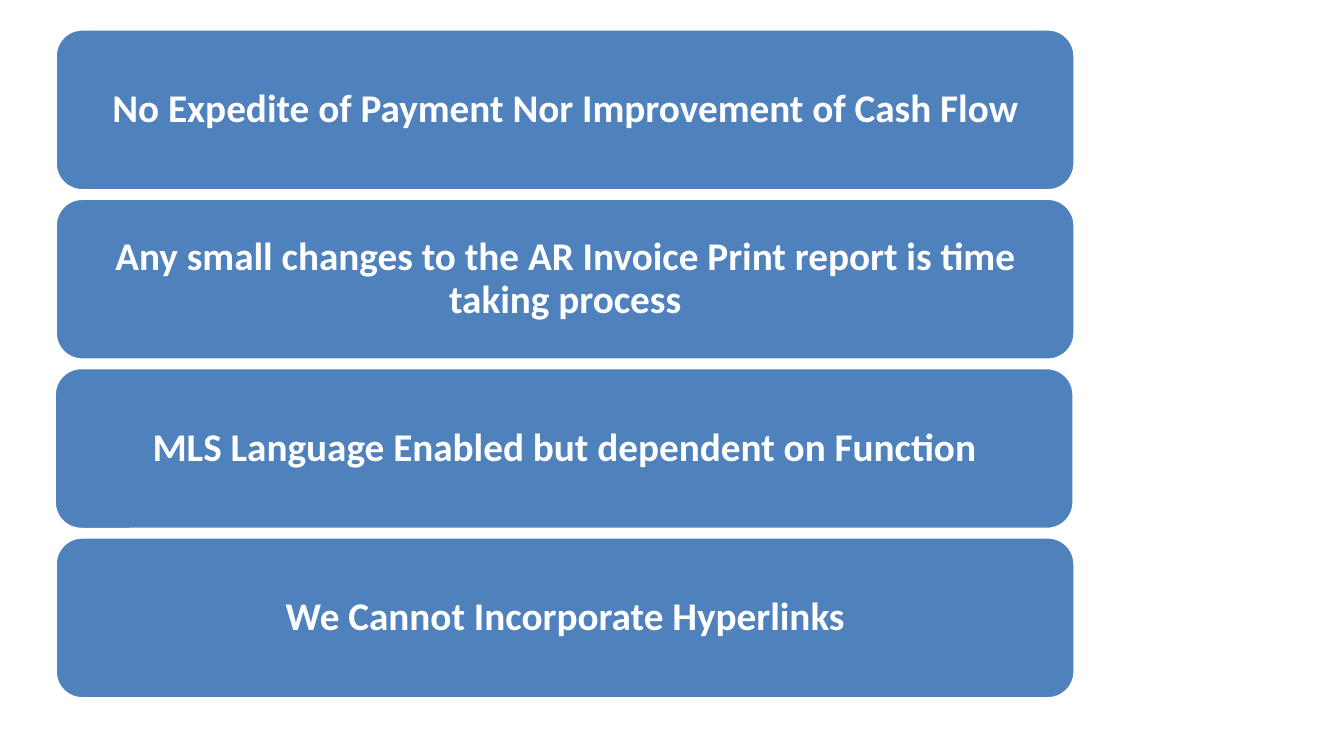
from dataclasses import dataclass

from pptx import Presentation
from pptx.dml.color import RGBColor
from pptx.enum.shapes import MSO_SHAPE
from pptx.enum.text import MSO_ANCHOR, PP_ALIGN
from pptx.shapes.autoshape import Shape
from pptx.slide import Slide
from pptx.util import Inches, Pt

ROUND = MSO_SHAPE.ROUNDED_RECTANGLE
MIDDLE = MSO_ANCHOR.MIDDLE
CENTER = PP_ALIGN.CENTER

COLORS = {"blue": "4F81BD", "white": "FFFFFF"}
TOP, STEP = 0.29, 1.68
WIDTH, HEIGHT = 10.11, 1.6


@dataclass
class Bar:
    text: str
    left: float = 0.55


BARS = [
    Bar("No Expedite of Payment Nor Improvement of Cash Flow"),
    Bar("Any small changes to the AR Invoice Print report is time taking process"),
    Bar("MLS Language Enabled but dependent on Function", left=0.54),
    Bar("We Cannot Incorporate Hyperlinks"),
]


def color(name: str) -> RGBColor:
    return RGBColor.from_string(COLORS[name])


def write(shape: Shape, text: str, *, size: float = 28, bold: bool = True,
          ink: str = "white", font: str = "Calibri") -> None:
    frame = shape.text_frame
    frame.word_wrap = True
    frame.vertical_anchor = MIDDLE
    frame.margin_left = frame.margin_right = Inches(0.12)
    frame.margin_top = frame.margin_bottom = Inches(0.06)
    para = frame.paragraphs[0]
    para.alignment = CENTER
    para.line_spacing = 0.9
    run = para.add_run()
    run.text = text
    run.font.name = font
    run.font.size = Pt(size)
    run.font.bold = bold
    run.font.color.rgb = color(ink)


def draw(slide: Slide, bar: Bar, top: float) -> None:
    shape = slide.shapes.add_shape(
        ROUND, Inches(bar.left), Inches(top), Inches(WIDTH), Inches(HEIGHT))
    shape.shadow.inherit = False
    shape.fill.solid()
    shape.fill.fore_color.rgb = color("blue")
    shape.line.color.rgb = color("white")
    shape.line.width = Pt(2)
    write(shape, bar.text)


def main() -> None:
    deck = Presentation()
    deck.slide_width = Inches(13.33)
    deck.slide_height = Inches(7.5)
    slide = deck.slides.add_slide(deck.slide_layouts[6])

    # Stack of statement bars
    for row, bar in enumerate(BARS):
        draw(slide, bar, TOP + row * STEP)

    deck.save("out.pptx")


if __name__ == "__main__":
    main()
